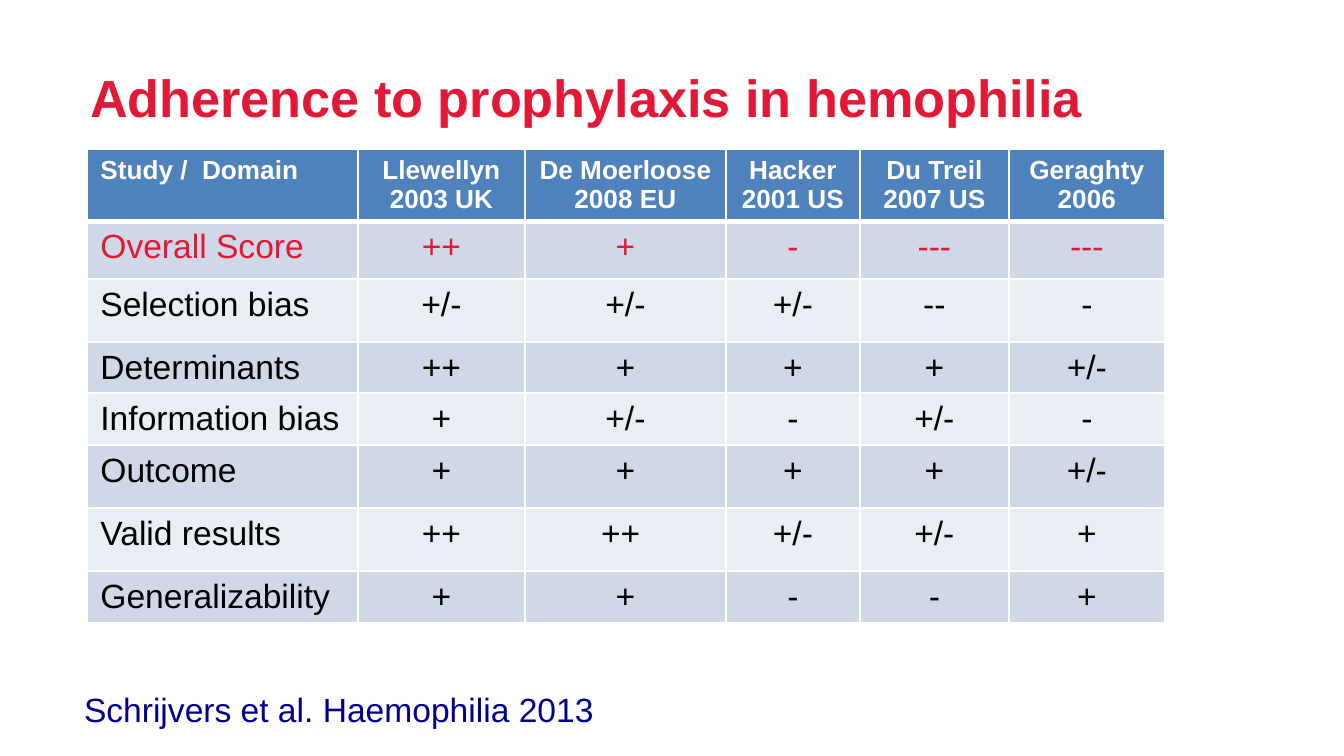
from lxml import etree
from pptx import Presentation, util as u
from pptx.dml.color import RGBColor
from pptx.enum import text
from pptx.oxml.ns import qn

COLORS = {
    "red": "E31837",
    "navy": "000090",
    "black": "000000",
    "white": "FFFFFF",
    "header": "4F81BD",
    "odd": "D0D8E8",
    "even": "E9EDF4",
}
COLUMN_WIDTHS = [271, 167, 201, 134, 149, 156]
ROWS = [
    (64, ["Study /  Domain", "Llewellyn\n2003 UK", "De Moerloose\n2008 EU",
          "Hacker\n2001 US", "Du Treil\n2007 US", "Geraghty\n2006"]),
    (58, ["Overall Score", "++", "+", "-", "---", "---"]),
    (63, ["Selection bias", "+/-", "+/-", "+/-", "--", "-"]),
    (51, ["Determinants", "++", "+", "+", "+", "+/-"]),
    (52, ["Information bias", "+", "+/-", "-", "+/-", "-"]),
    (63, ["Outcome", "+", "+", "+", "+", "+/-"]),
    (63, ["Valid results", "++", "++ ", "+/-", "+/-", "+"]),
    (36, ["Generalizability", "+", "+", "-", "-", "+"]),
]


def px(length):
    return u.Emu(round(length * 914400 / 134.4))


class SlideBuilder:
    font = "Arial"

    def __init__(self, page):
        self.page = page

    def add_span(self, para, words, size, color, bold=False, align=text.PP_ALIGN.LEFT):
        para.alignment = align
        para.space_before = u.Pt(0)
        span = para.add_run()
        span.text = words
        span.font.name = self.font
        span.font.size = u.Pt(size)
        span.font.bold = bold
        span.font.color.rgb = RGBColor.from_string(COLORS[color])

    def placeholder(self, index, area, top_inset, words, size, color, bold=False):
        box = self.page.placeholders[index]
        box.left, box.top, box.width, box.height = map(px, area)
        frame = box.text_frame
        frame.word_wrap = True
        frame.auto_size = text.MSO_AUTO_SIZE.NONE
        frame.vertical_anchor = text.MSO_ANCHOR.TOP
        frame.margin_left = frame.margin_right = frame.margin_bottom = 0
        frame.margin_top = px(top_inset)
        para = frame.paragraphs[0]
        properties = para._p.get_or_add_pPr()
        properties.set("marL", "0")
        properties.set("indent", "0")
        etree.SubElement(properties, qn("a:buNone"))
        self.add_span(para, words, size, color, bold)

    def border(self, cell, side, points):
        line = etree.SubElement(cell._tc.get_or_add_tcPr(), qn("a:ln" + side),
                                w=str(u.Pt(points)))
        fill = etree.SubElement(line, qn("a:solidFill"))
        etree.SubElement(fill, qn("a:srgbClr"), val=COLORS["white"])

    def cell(self, cell, row, column, words):
        for side in "LRTB":
            thick = (row, side) in [(0, "B"), (1, "T")]
            self.border(cell, side, 3 if thick else 1)
        fill = "header" if row == 0 else "odd" if row % 2 else "even"
        cell.fill.solid()
        cell.fill.fore_color.rgb = RGBColor.from_string(COLORS[fill])
        size = 14 if row == 0 else 18
        color = {0: "white", 1: "red"}.get(row, "black")
        align = text.PP_ALIGN.CENTER if column else text.PP_ALIGN.LEFT
        frame = cell.text_frame
        for number, line in enumerate(words.split("\n")):
            para = frame.add_paragraph() if number else frame.paragraphs[0]
            self.add_span(para, line, size, color, row == 0, align)

    def table(self, left, top, widths, rows):
        height = sum(row_height for row_height, _ in rows)
        table = self.page.shapes.add_table(
            len(rows), len(widths), px(left), px(top), px(sum(widths)), px(height)).table
        for column, width in zip(table.columns, widths):
            column.width = px(width)
        for row, (row_height, entries) in enumerate(rows):
            table.rows[row].height = px(row_height)
            for column, words in enumerate(entries):
                self.cell(table.cell(row, column), row, column, words)


def main():
    deck = Presentation()
    deck.slide_width, deck.slide_height = px(1344), px(756)
    page = deck.slides.add_slide(deck.slide_layouts[1])
    builder = SlideBuilder(page)
    builder.placeholder(0, (90, 58, 1189, 90), 7,
                        "Adherence to prophylaxis in hemophilia", 28, "red", True)
    builder.table(87, 149, COLUMN_WIDTHS, ROWS)
    builder.placeholder(1, (84, 680, 841, 52), 9,
                        "Schrijvers et al. Haemophilia 2013", 18, "navy")
    deck.save("out.pptx")


if __name__ == "__main__":
    main()
